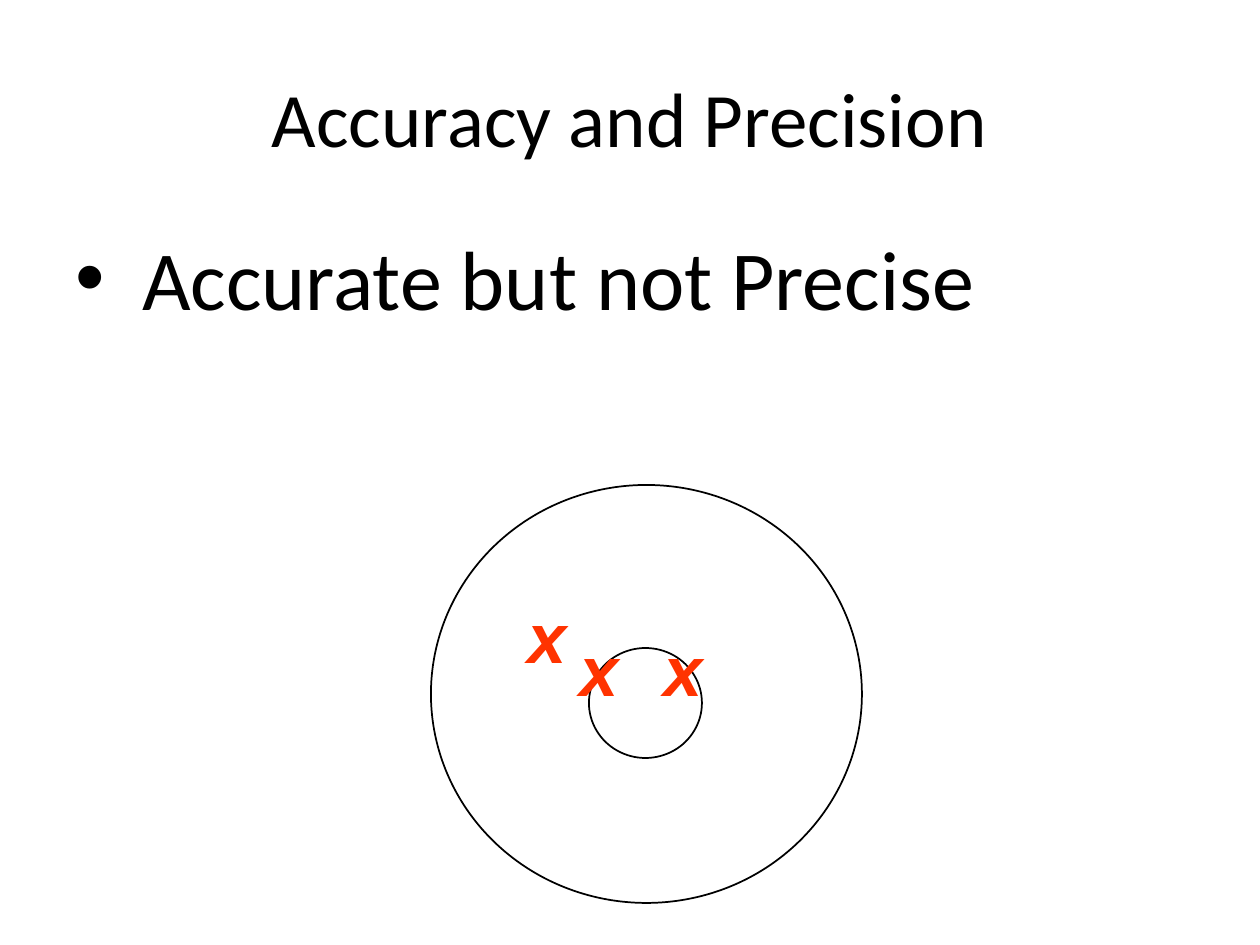
from lxml.etree import SubElement
from pptx import Presentation
from pptx.dml.color import RGBColor
from pptx.enum.shapes import MSO_SHAPE
from pptx.enum.text import MSO_ANCHOR, MSO_AUTO_SIZE, PP_ALIGN
from pptx.oxml.ns import qn
from pptx.util import Pt

PX = 7257
SLIDE_SIZE = (1260, 945)
INK = "000000"
HEADING = {"name": "Calibri", "size": Pt(44)}
BULLET = {"name": "Calibri", "size": Pt(48)}
MARK = {"name": "Arial", "size": Pt(40), "bold": True, "italic": True}

TITLE = ("Accuracy and Precision", (63, 38, 1134, 158))
STATEMENT = (" Accurate but not Precise", (63, 220, 1134, 183))
BULLET_INDENT = 48
TARGET_RINGS = [(431, 485, 431, 418), (589, 648, 113, 110)]
HITS = [(515, 587), (651, 620), (567, 620)]
HIT_SIZE = (100, 97)
HIT_COLOR = "FF3300"


def color(value):
    """Turn a hex string into a colour."""
    return RGBColor.from_string(value)


def scaled(box):
    """Turn px lengths into EMU."""
    return [length * PX for length in box]


def add_text(slide, text, box, font_format, ink=INK, **frame_format):
    """Add a one-paragraph text box and return its paragraph."""
    frame = slide.shapes.add_textbox(*scaled(box)).text_frame
    for name, value in {"word_wrap": True, **frame_format}.items():
        setattr(frame, name, value)
    paragraph = frame.paragraphs[0]
    run = paragraph.add_run()
    run.text = text
    for name, value in font_format.items():
        setattr(run.font, name, value)
    run.font.color.rgb = color(ink)
    return paragraph


def add_bullet(paragraph):
    """Give a paragraph a hanging round bullet and relative space before."""
    properties = paragraph._p.get_or_add_pPr()
    properties.set("marL", str(BULLET_INDENT * PX))
    properties.set("indent", str(-BULLET_INDENT * PX))
    spacing = SubElement(properties, qn("a:spcBef"))
    SubElement(spacing, qn("a:spcPct"), val="20000")
    SubElement(properties, qn("a:buFont"), typeface="Arial")
    SubElement(properties, qn("a:buChar"), char="•")


def add_ring(slide, box):
    """Add one unfilled ring of the target."""
    shape = slide.shapes.add_shape(MSO_SHAPE.OVAL, *scaled(box))
    shape.shadow.inherit = False
    shape.fill.background()
    shape.line.color.rgb = color(INK)
    shape.line.width = Pt(1)


def main():
    """Build and save the slide."""
    presentation = Presentation()
    presentation.slide_width, presentation.slide_height = scaled(SLIDE_SIZE)
    slide = presentation.slides.add_slide(presentation.slide_layouts[6])
    heading = add_text(slide, *TITLE, HEADING, vertical_anchor=MSO_ANCHOR.MIDDLE)
    heading.alignment = PP_ALIGN.CENTER
    add_bullet(add_text(slide, *STATEMENT, BULLET))
    for ring in TARGET_RINGS:
        add_ring(slide, ring)
    for position in HITS:
        add_text(slide, "x", position + HIT_SIZE, MARK, HIT_COLOR,
                 auto_size=MSO_AUTO_SIZE.SHAPE_TO_FIT_TEXT)
    presentation.save("out.pptx")


if __name__ == "__main__":
    main()
